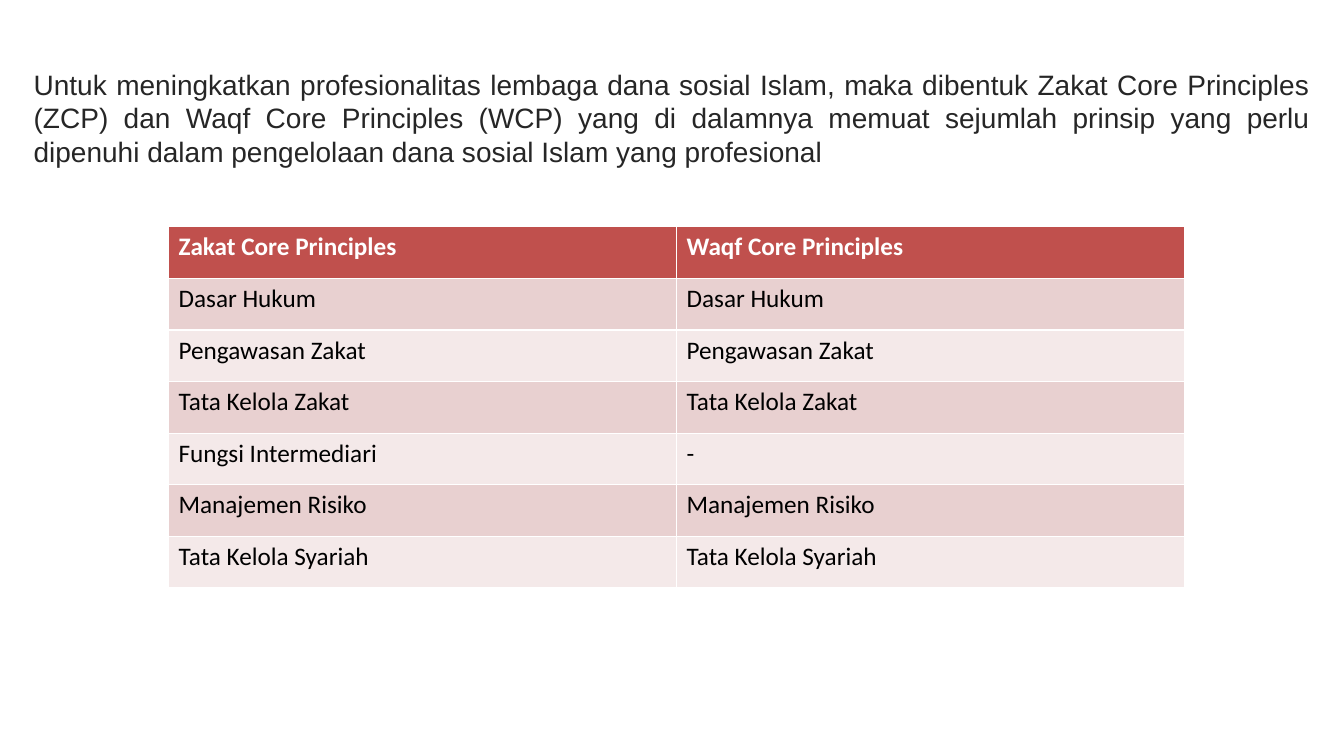
"""Build the slide that compares the Zakat and Waqf Core Principles."""
import pptx
import pptx.dml.color
import pptx.enum.text
import pptx.util

Pt = pptx.util.Pt
RGBColor = pptx.dml.color.RGBColor

INTRO = (
    "Untuk meningkatkan profesionalitas lembaga dana sosial Islam, maka dibentuk "
    "Zakat Core Principles (ZCP) dan Waqf Core Principles (WCP) yang di dalamnya "
    "memuat sejumlah prinsip yang perlu dipenuhi dalam pengelolaan dana sosial "
    "Islam yang profesional"
)
PRINCIPLES = [
    ("Zakat Core Principles", "Waqf Core Principles"),
    ("Dasar Hukum", "Dasar Hukum"),
    ("Pengawasan Zakat", "Pengawasan Zakat"),
    ("Tata Kelola Zakat", "Tata Kelola Zakat"),
    ("Fungsi Intermediari", "-"),
    ("Manajemen Risiko", "Manajemen Risiko"),
    ("Tata Kelola Syariah", "Tata Kelola Syariah"),
]

WHITE = RGBColor(0xFF, 0xFF, 0xFF)
BLACK = RGBColor(0x00, 0x00, 0x00)
CHARCOAL = RGBColor(0x26, 0x26, 0x26)
HEADER_RED = RGBColor(0xC0, 0x50, 0x4D)
BANDS = (RGBColor(0xF4, 0xE9, 0xE9), RGBColor(0xE8, 0xD0, 0xD0))

COLUMN_WIDTH = 362.88
ROW_HEIGHT = 36.86


def style_font(paragraph, name, size, color, bold=False):
    for run in paragraph.runs:
        run.font.name = name
        run.font.size = Pt(size)
        run.font.color.rgb = color
        run.font.bold = bold


def add_intro(slide):
    frame = slide.shapes.add_textbox(Pt(24), Pt(48), Pt(912), Pt(72.72)).text_frame
    frame.word_wrap = True
    frame.margin_left = frame.margin_right = frame.margin_top = frame.margin_bottom = 0
    frame.text = INTRO
    intro = frame.paragraphs[0]
    intro.alignment = pptx.enum.text.PP_ALIGN.JUSTIFY
    style_font(intro, "Arial", 20, CHARCOAL)


def add_principles(slide):
    row_count, column_count = len(PRINCIPLES), len(PRINCIPLES[0])
    principles = slide.shapes.add_table(
        row_count, column_count, Pt(120.4), Pt(162),
        Pt(COLUMN_WIDTH * column_count), Pt(ROW_HEIGHT * row_count),
    ).table
    for row, names in enumerate(PRINCIPLES):
        is_header = row == 0
        for column, name in enumerate(names):
            cell = principles.cell(row, column)
            cell.fill.solid()
            cell.fill.fore_color.rgb = HEADER_RED if is_header else BANDS[row % 2]
            cell.text_frame.text = name
            style_font(cell.text_frame.paragraphs[0], "Calibri", 18,
                       WHITE if is_header else BLACK, is_header)


def main():
    deck = pptx.Presentation()
    deck.slide_width, deck.slide_height = Pt(960), Pt(540)
    slide = deck.slides.add_slide(deck.slide_layouts[6])
    add_intro(slide)
    add_principles(slide)
    deck.save("out.pptx")


if __name__ == "__main__":
    main()
